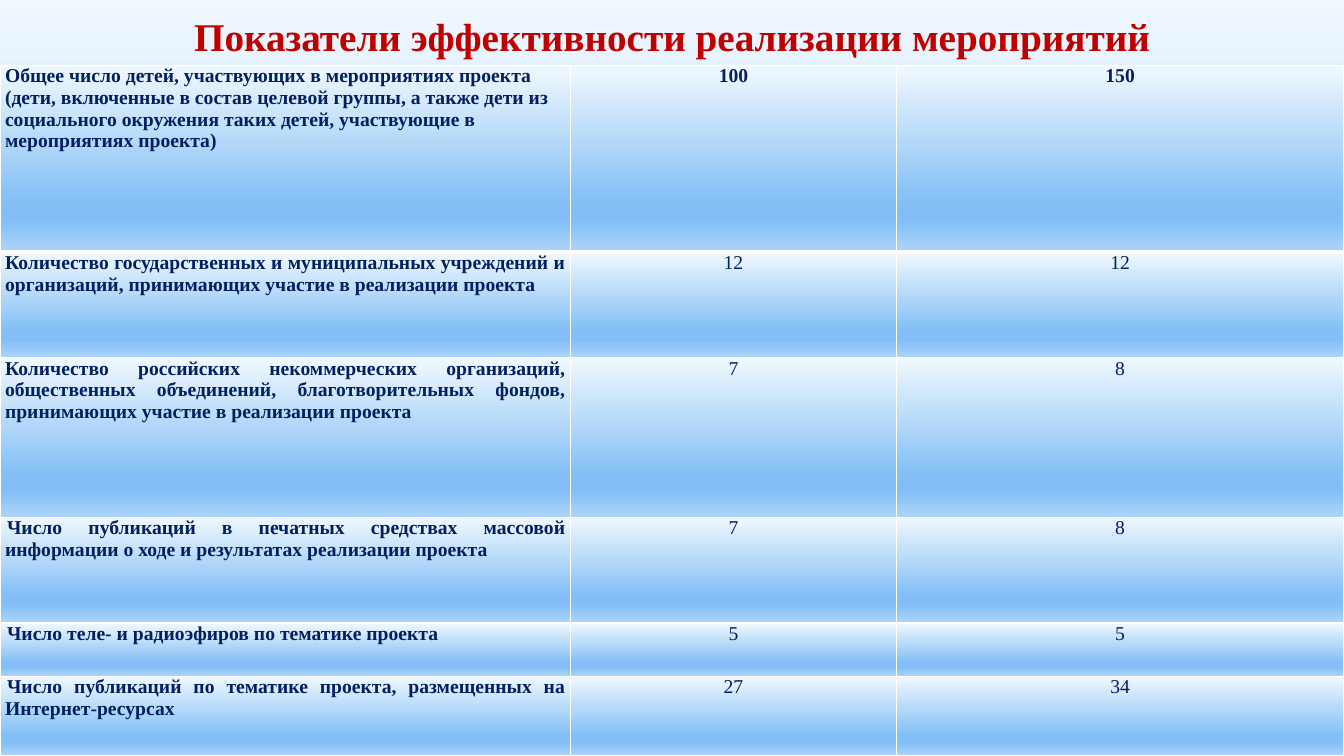
from lxml.etree import SubElement
from pptx import Presentation
from pptx.dml.color import RGBColor
from pptx.enum.text import MSO_ANCHOR, PP_ALIGN
from pptx.oxml import parse_xml
from pptx.oxml.ns import nsdecls, qn
from pptx.util import Inches, Pt

FONT = "Times New Roman"
RED, NAVY, WHITE = "C00000", "002060", "FFFFFF"
STOPS = [(0, "F1F8FE"), (74, "83BFF6"), (83, "83BFF6"), (100, "ACD4F9")]
GRADIENT = (
    f'<a:gradFill {nsdecls("a")} rotWithShape="1"><a:gsLst>'
    + "".join(f'<a:gs pos="{pos * 1000}"><a:srgbClr val="{c}"/></a:gs>' for pos, c in STOPS)
    + '</a:gsLst><a:lin ang="5400000" scaled="0"/></a:gradFill>'
)


def add_text(p, text, size, color, bold, align):
    p.alignment = align
    r = p.add_run()
    r.text = text
    r.font.name = FONT
    r.font.size = Pt(size)
    r.font.bold = bold
    r.font.color.rgb = RGBColor.from_string(color)


def add_border(tcPr, side, width):
    ln = SubElement(tcPr, qn(f"a:ln{side}"), w=str(Pt(width)))
    SubElement(SubElement(ln, qn("a:solidFill")), qn("a:srgbClr"), val=WHITE)


prs = Presentation()
prs.slide_width, prs.slide_height = Inches(13.33), Inches(7.5)
s = prs.slides.add_slide(prs.slide_layouts[5])

# Background
bg = parse_xml(f'<p:bg {nsdecls("p", "a")}><p:bgPr>{GRADIENT}<a:effectLst/></p:bgPr></p:bg>')
s.element.cSld.insert(0, bg)

# Title
title = s.shapes.title
title.left, title.top = 0, Inches(0.08)
title.width, title.height = prs.slide_width, Inches(0.56)
tf = title.text_frame
tf.vertical_anchor = MSO_ANCHOR.BOTTOM
add_text(tf.paragraphs[0], "Показатели эффективности реализации мероприятий",
         28, RED, True, PP_ALIGN.CENTER)

# Indicators: name, two values, row height, first-line indent
indicators = [
    ("Общее число детей, участвующих в мероприятиях проекта (дети, включенные в состав "
     "целевой группы, а также дети из социального окружения таких детей, участвующие в "
     "мероприятиях проекта)", "100", "150", 1.85, 0),
    ("Количество государственных и муниципальных учреждений и организаций, принимающих "
     "участие в реализации проекта", "12", "12", 1.05, 0),
    ("Количество российских некоммерческих организаций, общественных объединений, "
     "благотворительных фондов, принимающих участие в реализации проекта",
     "7", "8", 1.58, 0),
    ("Число публикаций в печатных средствах массовой информации о ходе и результатах "
     "реализации проекта", "7", "8", 1.05, 0.02),
    ("Число теле- и радиоэфиров по тематике проекта", "5", "5", 0.53, 0.02),
    ("Число публикаций по тематике проекта, размещенных на Интернет-ресурсах",
     "27", "34", 0.79, 0.02),
]
col_widths = [5.66, 3.23, 4.44]

# Table
table = s.shapes.add_table(len(indicators), len(col_widths), 0, Inches(0.65),
                           prs.slide_width, Inches(6.85)).table
for column, width in zip(table.columns, col_widths):
    column.width = Inches(width)

for i, (*texts, height, indent) in enumerate(indicators):
    table.rows[i].height = Inches(height)
    for j, text in enumerate(texts):
        cell = table.cell(i, j)
        cell.margin_left = cell.margin_right = Inches(0.05)
        cell.margin_top = cell.margin_bottom = 0
        p = cell.text_frame.paragraphs[0]
        if j > 0:
            align = PP_ALIGN.CENTER
        else:
            align = PP_ALIGN.JUSTIFY if i > 0 else PP_ALIGN.LEFT
            p._p.get_or_add_pPr().set("indent", str(Inches(indent)))
        add_text(p, text, 14, NAVY, i == 0 or j == 0, align)

        # White borders, thicker under the first row
        tcPr = cell._tc.get_or_add_tcPr()
        for side in "LRTB":
            thick = (i, side) in [(0, "B"), (1, "T")]
            add_border(tcPr, side, 3 if thick else 1)
        tcPr.append(parse_xml(GRADIENT))

prs.save("out.pptx")
